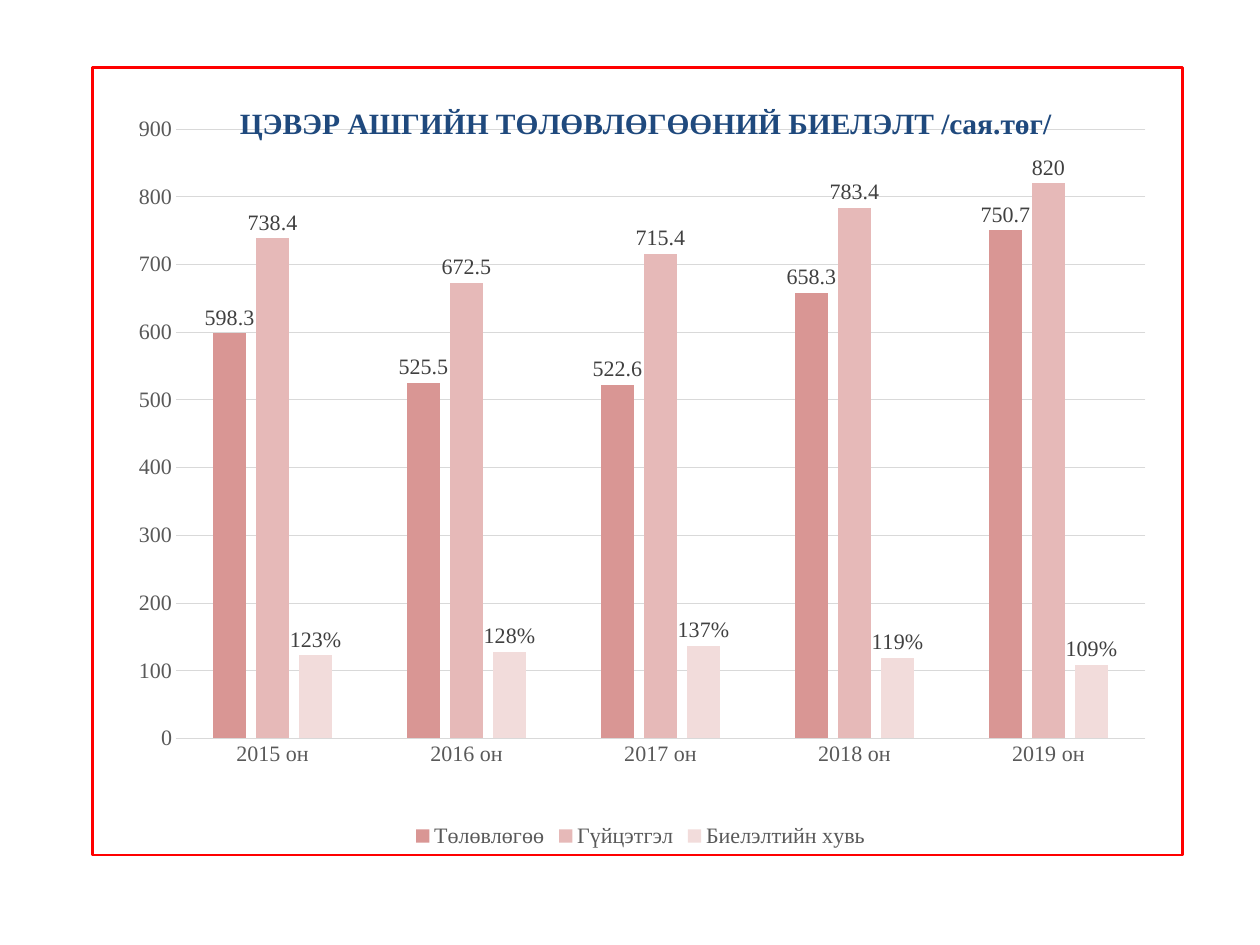
"""Build a slide with a column chart of planned and actual net profit."""
from lxml.etree import SubElement
from pptx import Presentation
from pptx.chart.data import CategoryChartData
from pptx.dml.color import RGBColor
from pptx.enum.chart import XL_CHART_TYPE, XL_LABEL_POSITION, XL_LEGEND_POSITION, XL_TICK_MARK
from pptx.oxml import parse_xml
from pptx.oxml.ns import nsdecls, qn
from pptx.util import Cm, Pt

TITLE = "ЦЭВЭР АШГИЙН ТӨЛӨВЛӨГӨӨНИЙ БИЕЛЭЛТ /сая.төг/"
YEARS = ["2015 он", "2016 он", "2017 он", "2018 он", "2019 он"]
SERIES = [
    ("Төлөвлөгөө", [598.3, 525.5, 522.6, 658.3, 750.7], "D99694", "General"),
    ("Гүйцэтгэл", [738.4, 672.5, 715.4, 783.4, 820], "E6B9B8", "General"),
    ("Биелэлтийн хувь", [123, 128, 137, 119, 109], "F2DCDB", '0"%"'),
]
FONT = "Times New Roman"
NAVY, GREY, DARK, GRID, RED = "1F497D", "595959", "404040", "D9D9D9", "FF0000"


def rgb(value):
    """Turn a hex string into a colour."""
    return RGBColor.from_string(value)


def style(font, size=18, color=GREY, bold=False):
    """Format a font."""
    font.name, font.size, font.bold = FONT, Pt(size), bold
    font.color.rgb = rgb(color)


def add_text(tf, text, **fmt):
    """Write one formatted run into a text frame."""
    r = tf.paragraphs[0].add_run()
    r.text = text
    style(r.font, **fmt)


def set_line(line, color, width=0.75):
    """Format a line."""
    line.color.rgb = rgb(color)
    line.width = Pt(width)


def place(parent, index, target=None, **edges):
    """Give a chart part a manual layout in fractions of the chart."""
    for old in parent.findall(qn("c:layout")):
        parent.remove(old)
    layout = parse_xml(f"<c:layout {nsdecls('c')}><c:manualLayout/></c:layout>")
    if target:
        SubElement(layout[0], qn("c:layoutTarget")).set("val", target)
    for edge in "xy":
        SubElement(layout[0], qn(f"c:{edge}Mode")).set("val", "edge")
    for edge, value in edges.items():
        SubElement(layout[0], qn(f"c:{edge}")).set("val", str(value))
    parent.insert(index, layout)


def add_border(chart, color, width):
    """Outline the chart area."""
    border = parse_xml(
        f'<c:spPr {nsdecls("c", "a")}><a:noFill/><a:ln w="{Pt(width)}"><a:solidFill>'
        f'<a:srgbClr val="{color}"/></a:solidFill></a:ln></c:spPr>')
    chart.element.find(qn("c:chart")).addnext(border)


def add_profit_chart(slide):
    """Add the chart and format its parts."""
    data = CategoryChartData()
    data.categories = YEARS
    for name, values, _, _ in SERIES:
        data.add_series(name, values)
    chart = slide.shapes.add_chart(
        XL_CHART_TYPE.COLUMN_CLUSTERED, Cm(2.62), Cm(1.9), Cm(31.32), Cm(22.66), data).chart
    style(chart.font, color="000000")
    add_border(chart, RED, 2.25)

    chart.has_title = True
    add_text(chart.chart_title.text_frame, TITLE, size=24, color=NAVY, bold=True)
    chart.has_legend = True
    chart.legend.position = XL_LEGEND_POSITION.BOTTOM
    chart.legend.include_in_layout = False
    style(chart.legend.font)

    for axis in (chart.category_axis, chart.value_axis):
        axis.major_tick_mark = axis.minor_tick_mark = XL_TICK_MARK.NONE
        style(axis.tick_labels.font)
    set_line(chart.category_axis.format.line, GRID)
    axis = chart.value_axis
    axis.minimum_scale, axis.maximum_scale, axis.major_unit = 0, 900, 100
    axis.format.line.fill.background()
    set_line(axis.major_gridlines.format.line, GRID)

    plot = chart.plots[0]
    plot.gap_width, plot.overlap, plot.vary_by_categories = 219, -27, False
    for series, (_, _, color, number_format) in zip(plot.series, SERIES):
        series.format.fill.solid()
        series.format.fill.fore_color.rgb = rgb(color)
        labels = series.data_labels
        labels.show_value = True
        labels.position = XL_LABEL_POSITION.OUTSIDE_END
        labels.number_format = number_format
        labels.number_format_is_linked = False
        style(labels.font, color=DARK)

    root = chart.element.find(qn("c:chart"))
    place(root.find(qn("c:title")), 1, x=0.13, y=0.04)
    place(root.find(qn("c:plotArea")), 0, "inner", x=0.076, y=0.078, w=0.89, h=0.774)
    place(root.find(qn("c:legend")), 1, x=0.29, y=0.955)


def main():
    """Build and save the presentation."""
    prs = Presentation()
    prs.slide_width, prs.slide_height = Cm(36.12), Cm(27.1)
    add_profit_chart(prs.slides.add_slide(prs.slide_layouts[6]))
    prs.save("out.pptx")


if __name__ == "__main__":
    main()
